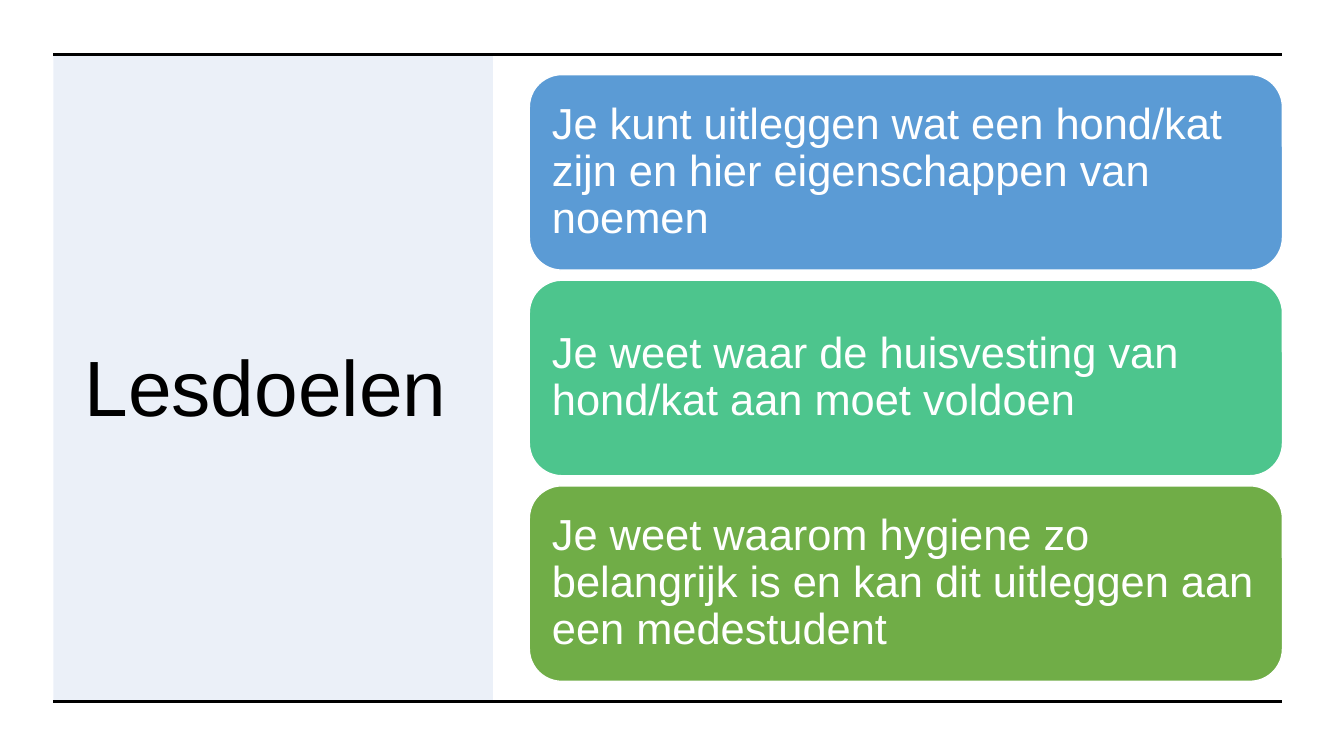
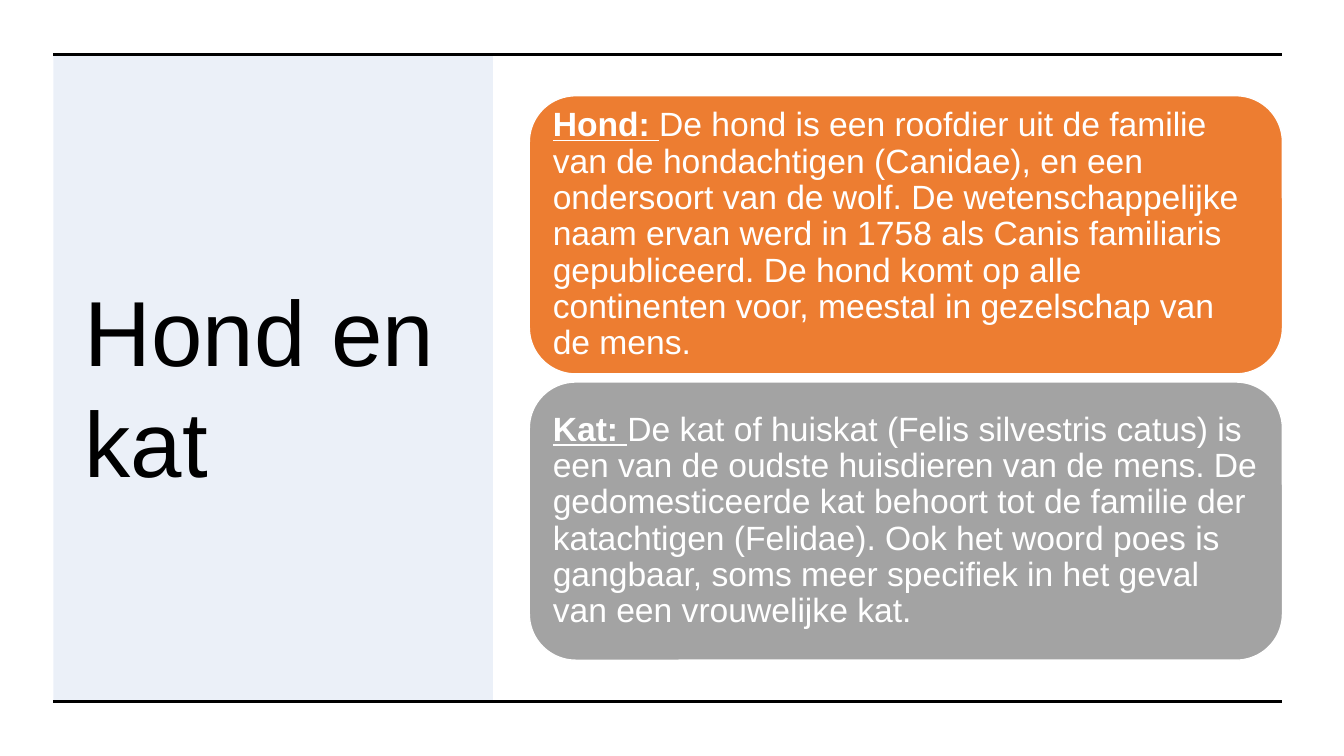
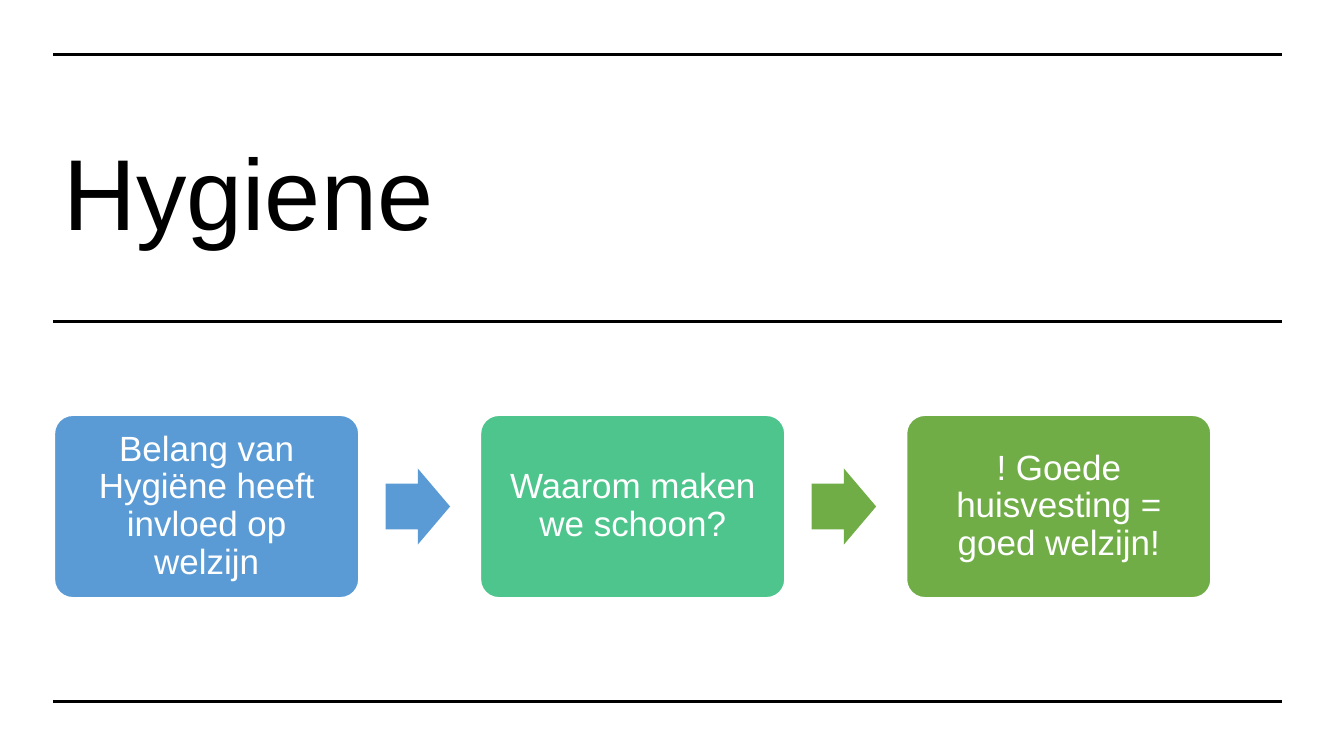
from dataclasses import dataclass

from lxml import etree
from pptx import Presentation
from pptx.dml.color import RGBColor
from pptx.enum.shapes import MSO_CONNECTOR, MSO_SHAPE
from pptx.enum.text import MSO_ANCHOR, PP_ALIGN
from pptx.oxml.ns import qn
from pptx.util import Inches, Pt

RECTANGLE = MSO_SHAPE.RECTANGLE
ROUNDED = MSO_SHAPE.ROUNDED_RECTANGLE
ARROW = MSO_SHAPE.RIGHT_ARROW
STRAIGHT = MSO_CONNECTOR.STRAIGHT
MIDDLE = MSO_ANCHOR.MIDDLE
LEFT, CENTER = PP_ALIGN.LEFT, PP_ALIGN.CENTER


@dataclass(frozen=True)
class Theme:
    font: str = "Arial"
    ink: str = "000000"
    paper: str = "FFFFFF"
    panel: str = "4472C4"
    panel_opacity: int = 10
    blue: str = "5B9BD5"
    mint: str = "4DC58D"
    green: str = "70AD47"
    orange: str = "ED7D31"
    grey: str = "A3A3A3"
    rule_width: float = 2.25
    goal_size: int = 31
    animal_size: int = 24
    step_size: int = 25


@dataclass(frozen=True)
class Box:
    left: float
    top: float
    width: float
    height: float

    @property
    def right(self):
        return self.left + self.width

    @property
    def bottom(self):
        return self.top + self.height

    def emu(self):
        return [Inches(n) for n in (self.left, self.top, self.width, self.height)]


THEME = Theme()
SLIDE_WIDTH, SLIDE_HEIGHT = 13.33, 7.5
FRAME = Box(0.53, 0.54, 12.19, 6.42)
PANEL = Box(FRAME.left, FRAME.top, 4.36, FRAME.height)
PANEL_TITLE = Box(0.74, 1.07, 3.89, 5.5)
CARDS = Box(5.25, FRAME.top, FRAME.right - 5.25, FRAME.height)
TOP_TITLE = Box(FRAME.left, 1.07, 9.2, 1.63)
DIVIDER_Y = 3.19
STEPS = Box(0.54, 4.12, 11.47, 1.81)


def color(value):
    return RGBColor.from_string(value)


def add_rule(slide, y):
    rule = slide.shapes.add_connector(
        STRAIGHT, Inches(FRAME.left), Inches(y), Inches(FRAME.right), Inches(y))
    rule.line.color.rgb = color(THEME.ink)
    rule.line.width = Pt(THEME.rule_width)
    etree.SubElement(rule.line._get_or_add_ln().getparent(), qn("a:effectLst"))


def add_block(slide, kind, box, fill, outline=None):
    shape = slide.shapes.add_shape(kind, *box.emu())
    shape.shadow.inherit = False
    shape.fill.solid()
    shape.fill.fore_color.rgb = color(fill)
    if outline:
        shape.line.color.rgb = color(outline)
        shape.line.width = Pt(1)
    else:
        shape.line.fill.background()
    return shape


def write(frame, runs, size, ink, align=LEFT, spacing=1.0):
    """Fill a frame with one paragraph; runs are (text, is_lead) pairs."""
    frame.word_wrap = True
    frame.vertical_anchor = MIDDLE
    paragraph = frame.paragraphs[0]
    paragraph.alignment = align
    paragraph.line_spacing = spacing
    paragraph.font.name = THEME.font
    paragraph.font.size = Pt(size)
    paragraph.font.color.rgb = color(ink)
    for text, is_lead in runs:
        run = paragraph.add_run()
        run.text = text
        if is_lead:
            run.font.bold = run.font.underline = True


def add_title(slide, box, text, size):
    title = slide.shapes.add_textbox(*box.emu())
    write(title.text_frame, [(text, False)], size, THEME.ink)


def add_card(slide, box, fill, runs, size, inset, align=LEFT):
    card = add_block(slide, ROUNDED, box, fill, THEME.paper)
    frame = card.text_frame
    frame.margin_left = frame.margin_right = Inches(inset)
    frame.margin_top = frame.margin_bottom = Inches(inset)
    write(frame, runs, size, THEME.paper, align, spacing=0.9)
    return card


def add_panel(slide, title, title_size):
    """Tinted panel at the left with the slide title."""
    panel = add_block(slide, RECTANGLE, PANEL, THEME.panel)
    tint = panel._element.spPr.find(qn("a:solidFill"))[0]
    etree.SubElement(tint, qn("a:alpha"), val=str(THEME.panel_opacity * 1000))
    add_title(slide, PANEL_TITLE, title, title_size)


def add_card_stack(slide, area, cards, height, gap, size, inset):
    """Equal cards below each other, centred vertically in the area."""
    stack_height = len(cards) * height + (len(cards) - 1) * gap
    top = area.top + (area.height - stack_height) / 2
    for row, (fill, runs) in enumerate(cards):
        box = Box(area.left, top + row * (height + gap), area.width, height)
        add_card(slide, box, fill, runs, size, inset)


def add_step_row(slide, area, steps):
    """Equal steps side by side, with an arrow in each gap."""
    gap_share = 0.4
    width = area.width / (len(steps) + (len(steps) - 1) * gap_share)
    arrow_width, arrow_height = 0.212 * width, 0.25 * width
    arrow_top = area.top + (area.height - arrow_height) / 2
    for column, (fill, arrow_fill, text) in enumerate(steps):
        box = Box(area.left + column * width * (1 + gap_share), area.top,
                  width, area.height)
        card = add_card(slide, box, fill, [(text, False)], THEME.step_size, 0.1, CENTER)
        card.adjustments[0] = 0.1
        if arrow_fill:
            arrow = add_block(slide, ARROW, Box(box.right + 0.088 * width, arrow_top,
                                                arrow_width, arrow_height), arrow_fill)
            arrow.adjustments[0] = 0.6


def new_slide(presentation):
    return presentation.slides.add_slide(presentation.slide_layouts[6])


def panel_slide(presentation, title, title_size, cards, **card_style):
    slide = new_slide(presentation)
    add_panel(slide, title, title_size)
    for y in (FRAME.top, FRAME.bottom):
        add_rule(slide, y)
    add_card_stack(slide, CARDS, cards, **card_style)


def process_slide(presentation, title, title_size, steps):
    slide = new_slide(presentation)
    add_title(slide, TOP_TITLE, title, title_size)
    for y in (FRAME.top, DIVIDER_Y, FRAME.bottom):
        add_rule(slide, y)
    add_step_row(slide, STEPS, steps)


def main():
    presentation = Presentation()
    presentation.slide_width = Inches(SLIDE_WIDTH)
    presentation.slide_height = Inches(SLIDE_HEIGHT)

    # Learning goals
    goals = [
        (THEME.blue, "Je kunt uitleggen wat een hond/kat zijn en hier "
                     "eigenschappen van noemen"),
        (THEME.mint, "Je weet waar de huisvesting van hond/kat aan moet voldoen"),
        (THEME.green, "Je weet waarom hygiene zo belangrijk is en kan dit "
                      "uitleggen aan een medestudent"),
    ]
    panel_slide(presentation, "Lesdoelen", 56,
                [(fill, [(text, False)]) for fill, text in goals],
                height=1.94, gap=0.1, size=THEME.goal_size, inset=0.13)

    # Dog and cat
    animals = [
        (THEME.orange, "Hond: ",
         "De hond is een roofdier uit de familie van de hondachtigen (Canidae), "
         "en een ondersoort van de wolf. De wetenschappelijke naam ervan werd in "
         "1758 als Canis familiaris gepubliceerd. De hond komt op alle "
         "continenten voor, meestal in gezelschap van de mens."),
        (THEME.grey, "Kat: ",
         "De kat of huiskat (Felis silvestris catus) is een van de oudste "
         "huisdieren van de mens. De gedomesticeerde kat behoort tot de familie "
         "der katachtigen (Felidae). Ook het woord poes is gangbaar, soms meer "
         "specifiek in het geval van een vrouwelijke kat."),
    ]
    panel_slide(presentation, "Hond en kat", 66,
                [(fill, [(lead, True), (text, False)]) for fill, lead, text in animals],
                height=2.76, gap=0.08, size=THEME.animal_size, inset=0.1)

    # Hygiene
    process_slide(presentation, "Hygiene", 72, [
        (THEME.blue, THEME.blue, "Belang van Hygiëne heeft invloed op welzijn"),
        (THEME.mint, THEME.green, "Waarom maken we schoon?"),
        (THEME.green, None, "! Goede huisvesting = goed welzijn!"),
    ])

    presentation.save("out.pptx")


if __name__ == "__main__":
    main()
